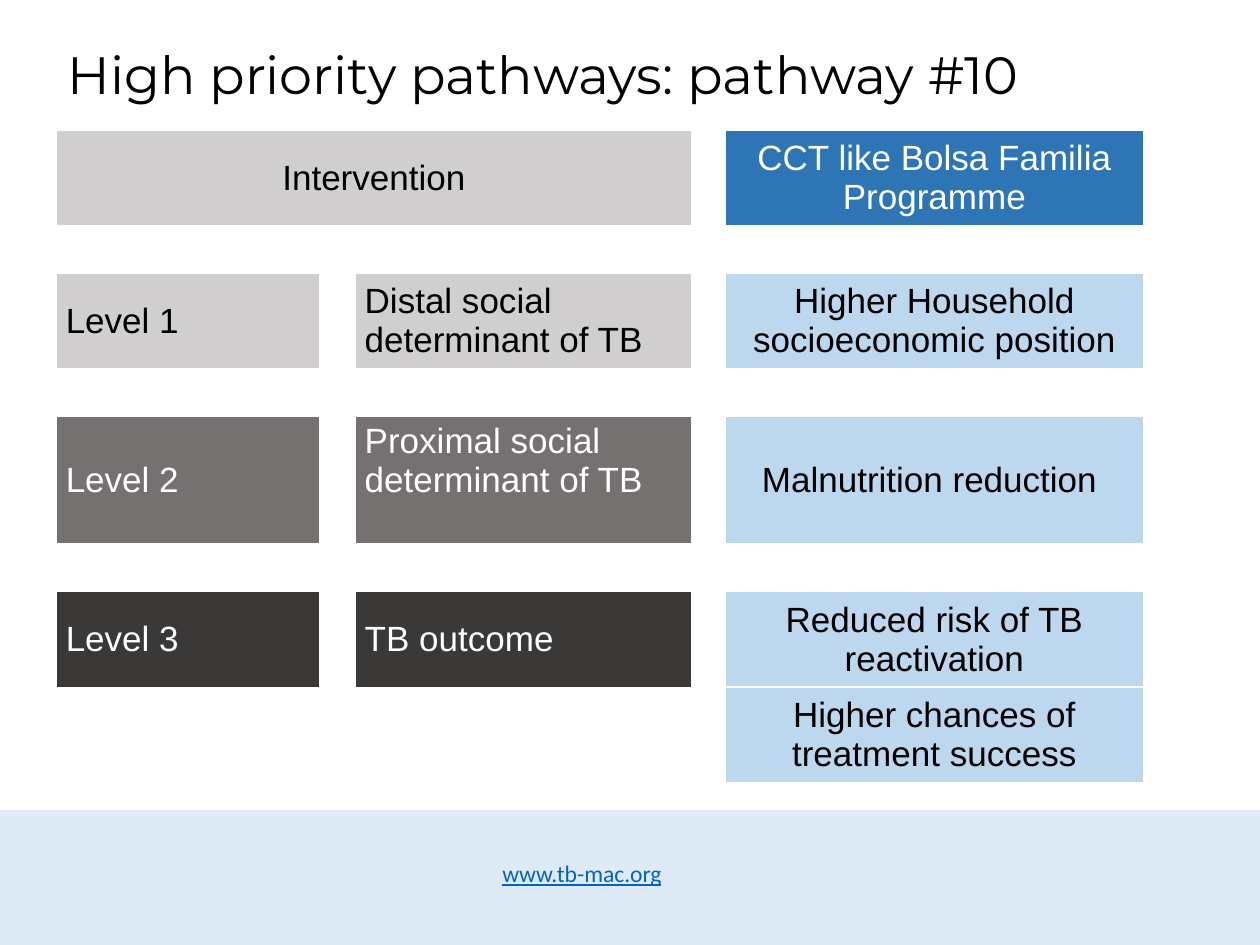
"""Build the slide on pathway #10 from conditional cash transfers to TB outcomes."""
from lxml import etree
from pptx import Presentation, util as u
from pptx.dml.color import RGBColor
from pptx.enum import shapes, text
from pptx.oxml.ns import qn

COLORS = {
    "black": "000000", "white": "FFFFFF", "light": "D0CECE", "mid": "767171",
    "dark": "3B3838", "blue": "2E75B6", "pale": "BDD7EE", "footer": "DEEBF7",
    "link": "0563C1",
}
TITLE = "High priority pathways: pathway #10"
SITE = "www.tb-mac.org"
COLUMNS = [262, 37, 335, 35, 417, 53]
ROWS = [87, 49, 87, 49, 126, 49, 95, 95]
NO_GRID = "{2D5ABB26-0587-4C30-8999-92F81FD0307C}"
LEFT, CENTER = text.PP_ALIGN.LEFT, text.PP_ALIGN.CENTER
TOP, MIDDLE = text.MSO_ANCHOR.TOP, text.MSO_ANCHOR.MIDDLE

CELLS = [
    (0, 0, ["Intervention"], "light", "black", CENTER, MIDDLE),
    (0, 4, ["CCT like Bolsa Familia Programme"], "blue", "white", CENTER, MIDDLE),
    (2, 0, ["Level 1"], "light", "black", LEFT, MIDDLE),
    (2, 2, ["Distal social", "determinant of TB"], "light", "black", LEFT, MIDDLE),
    (2, 4, ["Higher Household socioeconomic position"], "pale", "black", CENTER, MIDDLE),
    (4, 0, ["Level 2"], "mid", "white", LEFT, MIDDLE),
    (4, 2, ["Proximal social", "determinant of TB"], "mid", "white", LEFT, TOP),
    (4, 4, ["Malnutrition reduction "], "pale", "black", CENTER, MIDDLE),
    (6, 0, ["Level 3"], "dark", "white", LEFT, MIDDLE),
    (6, 2, ["TB outcome"], "dark", "white", LEFT, MIDDLE),
    (6, 4, ["Reduced risk of TB reactivation"], "pale", "black", CENTER, MIDDLE),
    (7, 4, ["Higher chances of treatment success"], "pale", "black", CENTER, MIDDLE),
]


def px(*lengths):
    return [u.Emu(round(n * 914400 / 126)) for n in lengths]


def rgb(color):
    return RGBColor.from_string(COLORS[color])


def write(paragraph, words, font, size, color, underline=None):
    run = paragraph.add_run()
    run.text = words
    run.font.name, run.font.size = font, u.Pt(size)
    run.font.color.rgb = rgb(color)
    run.font.underline = underline


def add_label(slide, box, words, font, size, color, wrap, underline=None):
    frame = slide.shapes.add_textbox(*px(*box)).text_frame
    frame.word_wrap = wrap
    frame.vertical_anchor = MIDDLE
    frame.margin_top = frame.margin_bottom = 0
    write(frame.paragraphs[0], words, font, size, color, underline)
    return frame


def add_border(cell, side):
    line = etree.Element(qn(f"a:{side}"), w=str(u.Pt(1)))
    fill = etree.SubElement(line, qn("a:solidFill"))
    etree.SubElement(fill, qn("a:srgbClr"), val=COLORS["white"])
    cell._tc.get_or_add_tcPr().insert(0, line)


def add_pathway(slide):
    box = px(57, 131, sum(COLUMNS), sum(ROWS))
    table = slide.shapes.add_table(len(ROWS), len(COLUMNS), *box).table
    table._tbl.tblPr.find(qn("a:tableStyleId")).text = NO_GRID
    table.first_row = table.horz_banding = False
    for column, width in zip(table.columns, px(*COLUMNS)):
        column.width = width
    for row, height in zip(table.rows, px(*ROWS)):
        row.height = height
    for cell in table.iter_cells():
        cell.fill.background()
        cell.margin_left = cell.margin_right = u.Inches(0.07)
        cell.margin_top = cell.margin_bottom = u.Inches(0.04)
    table.cell(0, 0).merge(table.cell(0, 2))
    for row, column, lines, fill, color, align, anchor in CELLS:
        cell = table.cell(row, column)
        cell.fill.solid()
        cell.fill.fore_color.rgb = rgb(fill)
        cell.vertical_anchor = anchor
        frame = cell.text_frame
        for i, words in enumerate(lines):
            paragraph = frame.add_paragraph() if i else frame.paragraphs[0]
            paragraph.alignment = align
            write(paragraph, words, "Arial", 20, color)
    add_border(table.cell(6, 4), "lnB")
    add_border(table.cell(7, 4), "lnT")


def main():
    deck = Presentation()
    deck.slide_width, deck.slide_height = px(1260, 945)
    slide = deck.slides.add_slide(deck.slide_layouts[6])
    footer = slide.shapes.add_shape(
        shapes.MSO_SHAPE.RECTANGLE, *px(0, 810, 1260, 135))
    footer.shadow.inherit = False
    footer.fill.solid()
    footer.fill.fore_color.rgb = rgb("footer")
    footer.line.fill.background()
    add_label(slide, (490, 852, 186, 42), SITE, "Calibri", 13.5, "link", False, True)
    title = add_label(slide, (55, 48, 1202, 58), TITLE, "Montserrat", 30, "black", True)
    title.paragraphs[0].line_spacing = 0.9
    add_pathway(slide)
    deck.save("out.pptx")


if __name__ == "__main__":
    main()
